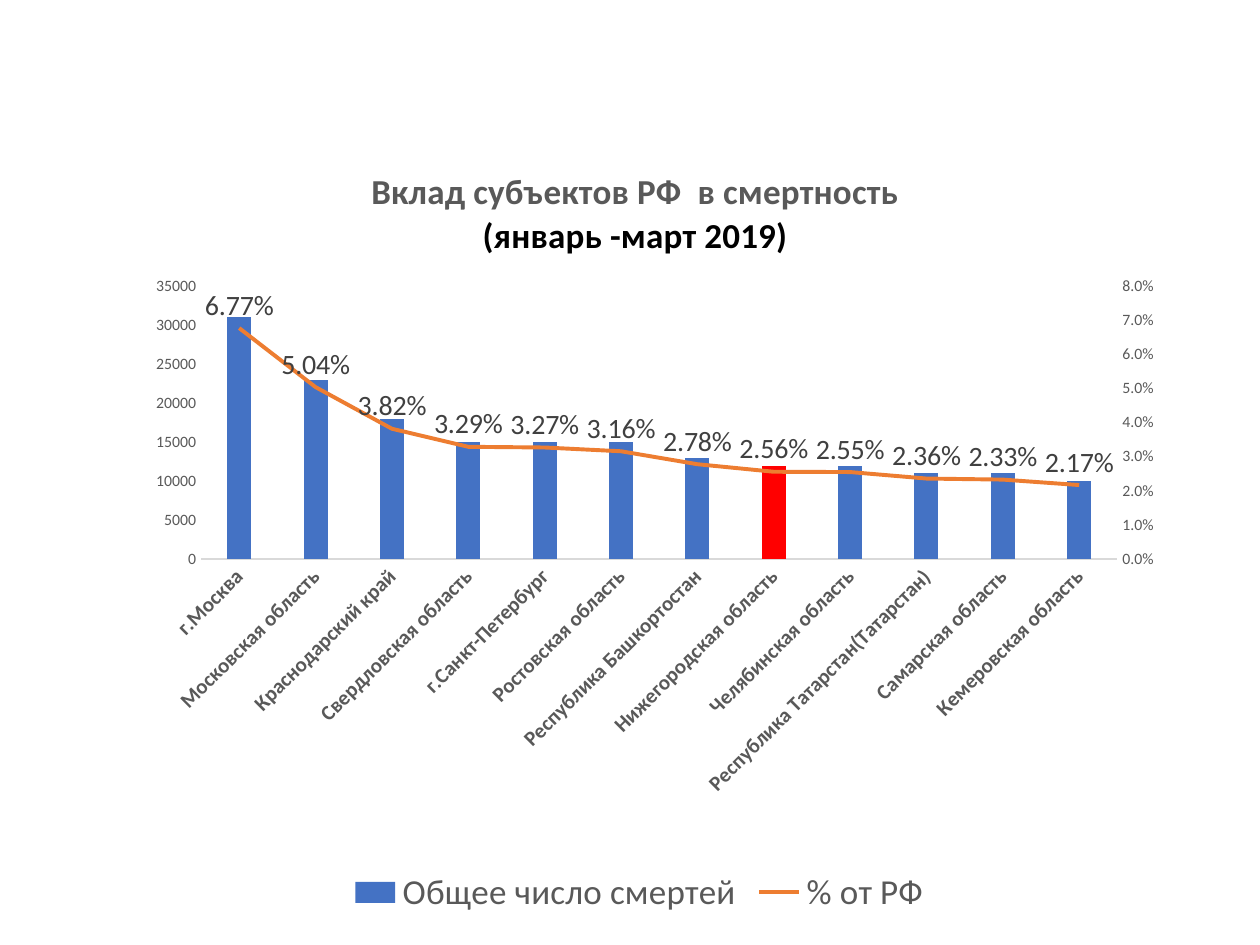
from copy import deepcopy

from pptx import Presentation
from pptx.chart.axis import ValueAxis
from pptx.chart.data import CategoryChartData
from pptx.dml.color import RGBColor
from pptx.enum.chart import (XL_CHART_TYPE, XL_LABEL_POSITION, XL_LEGEND_POSITION,
                             XL_MARKER_STYLE, XL_TICK_MARK)
from pptx.enum.text import PP_ALIGN
from pptx.oxml import parse_xml
from pptx.oxml.ns import nsdecls, qn
from pptx.util import Inches, Pt

BLUE = RGBColor(0x44, 0x72, 0xC4)
ORANGE = RGBColor(0xED, 0x7D, 0x31)
RED = RGBColor(0xFF, 0x00, 0x00)
GREY = RGBColor(0x59, 0x59, 0x59)
DARK_GREY = RGBColor(0x40, 0x40, 0x40)
LIGHT_GREY = RGBColor(0xD9, 0xD9, 0xD9)
BLACK = RGBColor(0x00, 0x00, 0x00)

TITLE = [("Вклад субъектов РФ  в смертность", GREY), ("(январь -март 2019)", BLACK)]
HIGHLIGHTED = "Hижегородская область"
REGIONS = [
    ("г.Москва", 31000, 0.0677),
    ("Московская область", 23000, 0.0504),
    ("Краснодарский край", 18000, 0.0382),
    ("Свердловская область", 15000, 0.0329),
    ("г.Санкт-Петербург", 15000, 0.0327),
    ("Ростовская область", 15000, 0.0316),
    ("Республика Башкортостан", 13000, 0.0278),
    (HIGHLIGHTED, 12000, 0.0256),
    ("Челябинская область", 12000, 0.0255),
    ("Республика Татарстан(Татарстан)", 11000, 0.0236),
    ("Самарская область", 11000, 0.0233),
    ("Кемеровская область", 10000, 0.0217),
]


class ChartSlide:
    """Holds the style, the current slide and its combined chart."""

    font_name = "Calibri"

    def __init__(self, presentation):
        self.slide = presentation.slides.add_slide(presentation.slide_layouts[6])

    def apply(self, target, **values):
        for name, value in values.items():
            setattr(target, name, value)

    def style_font(self, font, size, color, bold=False):
        self.apply(font, name=self.font_name, size=Pt(size), bold=bold)
        font.color.rgb = color

    def remove_children(self, element, tag):
        for child in element.findall(qn(tag)):
            element.remove(child)

    def set_layout(self, element, index, **values):
        self.remove_children(element, "c:layout")
        parts = "".join(f'<c:{name} val="{value}"/>' for name, value in values.items())
        element.insert(index, parse_xml(
            f'<c:layout {nsdecls("c")}><c:manualLayout>{parts}</c:manualLayout></c:layout>'))

    def add_chart(self, left, top, width, height):
        regions, deaths, shares = zip(*REGIONS)
        data = CategoryChartData()
        data.categories = regions
        data.add_series("Общее число смертей", deaths, "0")
        data.add_series("% от РФ", shares, "0.00%")
        self.chart = self.slide.shapes.add_chart(
            XL_CHART_TYPE.COLUMN_CLUSTERED, Inches(left), Inches(top),
            Inches(width), Inches(height), data).chart
        self.style_font(self.chart.font, 10, BLACK)
        plot_area = self.chart.plots[0]._element.getparent()
        self.set_layout(plot_area, 0, layoutTarget="inner", xMode="edge",
                        yMode="edge", x=0.113, y=0.186, w=0.809, h=0.35)

    def add_title(self):
        title = self.chart.chart_title
        frame = title.text_frame
        for index, (text, color) in enumerate(TITLE):
            paragraph = frame.add_paragraph() if index else frame.paragraphs[0]
            paragraph.alignment = PP_ALIGN.CENTER
            run = paragraph.add_run()
            run.text = text
            self.style_font(run.font, 20, color, True)
        self.set_layout(title._element, 1, xMode="edge", yMode="edge", x=0.26, y=0.03)

    def add_columns(self):
        plot = self.chart.plots[0]
        self.apply(plot, gap_width=219, overlap=-27, vary_by_categories=False)
        columns = plot.series[0]
        highlighted = columns.points[[region[0] for region in REGIONS].index(HIGHLIGHTED)]
        for item, color in ((columns, BLUE), (highlighted, RED)):
            item.format.fill.solid()
            item.format.fill.fore_color.rgb = color

    def style_axis(self, axis, size, bold=False):
        self.apply(axis, major_tick_mark=XL_TICK_MARK.NONE,
                   minor_tick_mark=XL_TICK_MARK.NONE, has_major_gridlines=False)
        self.style_font(axis.tick_labels.font, size, GREY, bold)

    def style_value_axis(self, axis, maximum, unit, number_format):
        self.style_axis(axis, 9)
        self.apply(axis, minimum_scale=0, maximum_scale=maximum, major_unit=unit)
        self.apply(axis.tick_labels, number_format=number_format,
                   number_format_is_linked=False)
        axis.format.line.fill.background()

    def add_axes(self):
        category_axis = self.chart.category_axis
        self.style_axis(category_axis, 12, True)
        category_axis.format.line.color.rgb = LIGHT_GREY
        category_axis.format.line.width = Pt(0.75)
        body = category_axis._element.find(qn("c:txPr")).find(qn("a:bodyPr"))
        body.set("rot", "-2700000")
        body.set("vert", "horz")
        self.style_value_axis(self.chart.value_axis, 35000, 5000, "0")

    def add_right_axis(self):
        category = self.chart.category_axis._element
        value = self.chart.value_axis._element
        right, hidden = deepcopy(value), deepcopy(category)
        changes = (
            (right, {"axId": "502", "crossAx": "501", "axPos": "r", "crosses": "max"}),
            (hidden, {"axId": "501", "crossAx": "502", "delete": "1"}),
        )
        for element, values in changes:
            for name, setting in values.items():
                element.find(qn(f"c:{name}")).set("val", setting)
        value.addnext(right)
        right.addnext(hidden)
        self.style_value_axis(ValueAxis(right), 0.08, 0.01, "0.0%")

    def add_line(self):
        bars = self.chart.plots[0]._element
        series_element = bars.findall(qn("c:ser"))[1]
        self.remove_children(series_element, "c:invertIfNegative")
        line_plot = parse_xml(
            f'<c:lineChart {nsdecls("c")}><c:grouping val="standard"/>'
            '<c:varyColors val="0"/><c:marker val="1"/>'
            '<c:axId val="501"/><c:axId val="502"/></c:lineChart>')
        line_plot.insert(2, series_element)
        bars.addnext(line_plot)
        series = self.chart.plots[1].series[0]
        series.smooth = False
        series.marker.style = XL_MARKER_STYLE.NONE
        series.format.line.color.rgb = ORANGE
        series.format.line.width = Pt(2.25)
        labels = series.data_labels
        self.apply(labels, show_value=True, position=XL_LABEL_POSITION.ABOVE,
                   number_format="0.00%", number_format_is_linked=False)
        self.style_font(labels.font, 16, DARK_GREY)

    def add_legend(self):
        self.chart.has_legend = True
        legend = self.chart.legend
        self.apply(legend, position=XL_LEGEND_POSITION.BOTTOM, include_in_layout=False)
        self.style_font(legend.font, 20, GREY)


def main():
    presentation = Presentation()
    presentation.slide_width = Inches(10)
    presentation.slide_height = Inches(7.5)
    chart_slide = ChartSlide(presentation)
    chart_slide.add_chart(0.58, 1.12, 8.99, 6.19)
    chart_slide.add_title()
    chart_slide.add_columns()
    chart_slide.add_axes()
    chart_slide.add_right_axis()
    chart_slide.add_line()
    chart_slide.add_legend()
    presentation.save("out.pptx")


if __name__ == "__main__":
    main()
